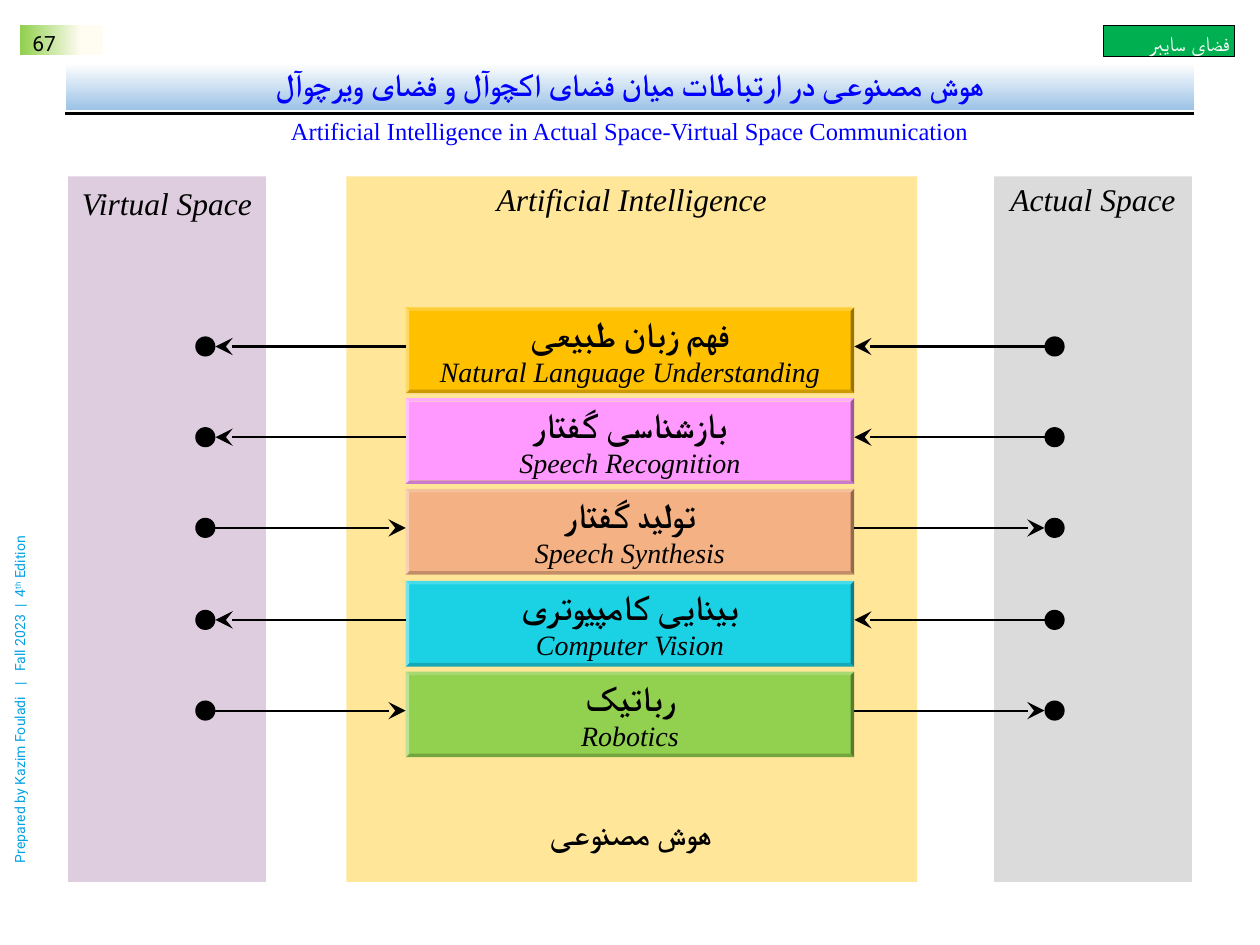
from lxml.etree import SubElement
from pptx import Presentation
from pptx.dml.color import RGBColor
from pptx.enum.shapes import MSO_CONNECTOR as LINK, MSO_SHAPE as SHAPE
from pptx.enum.text import MSO_ANCHOR as ANCHOR, MSO_AUTO_SIZE as FIT, PP_ALIGN as ALIGN
from pptx.oxml.ns import qn
from pptx.util import Emu, Pt

PX = 9144  # 100 px to the inch
ROMAN, SANS, FARSI = "Times New Roman", "Roboto", "Calibri"
BLACK, BLUE = "000000", "0000FF"
ROWS = [  # Farsi, English, fill, whether it leads to actual space
    ("فهم زبان طبیعی", "Natural Language Understanding", "FFC000", False),
    ("بازشناسی گفتار", "Speech Recognition", "FF99FF", False),
    ("تولید گفتار", "Speech Synthesis", "F4B183", True),
    ("بینایی کامپیوتری", "Computer Vision", "1BD2E5", False),
    ("رباتیک", "Robotics", "92D050", True),
]


def px(*nums):
    return [Emu(n * PX) for n in nums]


def rgb(code):
    return RGBColor.from_string(code)


def place(shape, box):
    shape.left, shape.top, shape.width, shape.height = px(*box)


def block(slide, kind, box, color=None):
    """Add a filled shape without line or shadow."""
    shape = slide.shapes.add_shape(kind, *px(*box))
    shape.shadow.inherit = False
    shape.line.fill.background()
    if color:
        shape.fill.solid()
        shape.fill.fore_color.rgb = rgb(color)
    return shape


def blend(shape, angle, *stops):
    """Fill with a gradient of (position, colour) stops."""
    shape.fill.gradient()
    shape.fill.gradient_angle = angle
    for stop, (spot, color) in zip(shape.fill.gradient_stops, stops):
        stop.position = spot
        stop.color.rgb = rgb(color)


def frame(shape, insets=(10, 5, 10, 5), anchor=ANCHOR.TOP):
    """Set up the text frame of a shape and return it."""
    area = shape.text_frame
    area.word_wrap = True
    area.auto_size = FIT.NONE
    area.vertical_anchor = anchor
    (area.margin_left, area.margin_top,
     area.margin_right, area.margin_bottom) = px(*insets)
    return area


def write(para, words, size, face, color=BLACK, align=ALIGN.CENTER,
          bold=False, italic=False, rtl=False):
    para.add_run().text = words
    para.alignment = align
    if rtl:
        para._p.get_or_add_pPr().set("rtl", "1")
    font = para.font
    font.size, font.name = Pt(size), face
    font.bold, font.italic = bold, italic
    font.color.rgb = rgb(color)
    SubElement(font._element, qn("a:cs"), typeface=face)


def label(slide, box, words, **style):
    area = frame(slide.shapes.add_textbox(*px(*box)))
    write(area.paragraphs[0], words, 18, **style)


def line(slide, ends, width, arrow=False):
    link = slide.shapes.add_connector(LINK.STRAIGHT, *px(*ends))
    link.line.color.rgb = rgb(BLACK)
    link.line.width = Pt(width)
    if arrow:
        SubElement(link.line._get_or_add_ln(), qn("a:tailEnd"),
                   type="stealth", w="lg", len="lg")
    SubElement(link._element.spPr, qn("a:effectLst"))


def header(slide, x, y, wide):
    line(slide, (x, y + 40, x + wide, y + 40), 1.5)

    title = slide.shapes.title
    place(title, (x, y, wide, 37))
    blend(title, 270, (0, "FFFFFF"), (1, "9DC3E6"))
    para = frame(title, anchor=ANCHOR.MIDDLE).paragraphs[0]
    para.line_spacing = 0.9
    write(para, "هوش مصنوعی در ارتباطات میان فضای اکچوآل و فضای ویرچوآل",
          18, FARSI, BLUE, bold=True, rtl=True)

    body = slide.placeholders[1]
    place(body, (x, y + 43, wide, 29))
    para = frame(body, (10, 2, 10, 5)).paragraphs[0]
    props = para._p.get_or_add_pPr()
    props.set("marL", "0")
    props.set("indent", "0")
    SubElement(props, qn("a:buNone"))
    para.line_spacing, para.space_before = 0.9, Pt(0)
    write(para, "Artificial Intelligence in Actual Space-Virtual Space Communication",
          14, ROMAN, BLUE, rtl=True)


def corners(slide, y):
    """Page number at the left and topic tag at the right."""
    page = block(slide, SHAPE.RECTANGLE, (16, y, 66, 24))
    blend(page, 180, (0.27, "FFFCF2"), (0.99, "92D050"))
    write(frame(page, (10, 4, 10, 0)).paragraphs[0], "67", 12, SANS,
          align=ALIGN.LEFT)

    tag = block(slide, SHAPE.RECTANGLE, (876, y, 104, 25), "00B050")
    tag.line.color.rgb = rgb(BLACK)
    tag.line.width = Pt(0.5)
    write(frame(tag, (4, 8, 4, 5), ANCHOR.MIDDLE).paragraphs[0],
          "فضای سایبر", 12, "Arial", "FFFFFF", ALIGN.RIGHT)


def credit(slide, box):
    """Upright line of text along the left edge."""
    note = slide.shapes.add_textbox(*px(*box))
    note.rotation = 270
    para = frame(note).paragraphs[0]
    tabs = SubElement(para._p.get_or_add_pPr(), qn("a:tabLst"))
    for stop in (141, 152, 203, 211):
        SubElement(tabs, qn("a:tab"), pos=str(stop * PX), algn="l")
    write(para, "Prepared by Kazim Fouladi\t|\tFall 2023\t|\t4", 8, SANS,
          "04A1E3", ALIGN.LEFT)
    power = para.add_run()
    power.text = "th"
    power.font._element.set("baseline", "30000")
    para.add_run().text = " Edition"


def space(slide, box, drop, name, color):
    """Coloured column with its English name at the top."""
    x, y, wide, _ = box
    block(slide, SHAPE.RECTANGLE, box, color)
    label(slide, (x, y + drop, wide, 40), name, face=ROMAN, italic=True)


def row(slide, box, farsi, english, color, leads):
    """One skill, tied to a dot in the space on either side."""
    x, y, wide, high = box
    skill = block(slide, SHAPE.BEVEL, box, color)
    skill.adjustments[0] = 0.041
    area = frame(skill, (4, 4, 4, 4), ANCHOR.MIDDLE)
    write(area.paragraphs[0], farsi, 20, FARSI, bold=True, rtl=True)
    write(area.add_paragraph(), english, 16, ROMAN, italic=True, rtl=True)

    mid, reach, dot = y + 31, 151, 16
    for left, spot in ((x - reach, x - reach - dot),
                       (x + wide, x + wide + reach)):
        block(slide, SHAPE.OVAL, (spot, mid - dot // 2, dot, dot), BLACK)
        start, end = (left, left + reach) if leads else (left + reach, left)
        line(slide, (start, mid, end, mid), 1.25, arrow=True)


def skills(slide, x, y, wide, high):
    """Spread the rows evenly over the height."""
    tall = 68
    step = (high - tall) / (len(ROWS) - 1)
    for i, item in enumerate(ROWS):
        row(slide, (x, y + round(i * step), wide, tall), *item)


def main():
    deck = Presentation()
    deck.slide_width, deck.slide_height = px(1000, 750)
    slide = deck.slides.add_slide(deck.slide_layouts[1])
    corners(slide, 20)
    credit(slide, (-132, 535, 296, 24))
    header(slide, 52, 50, 896)
    space(slide, (275, 140, 453, 560), -2, "Artificial Intelligence", "FFE699")
    space(slide, (789, 140, 157, 560), -2, "Actual Space", "DBDBDB")
    space(slide, (54, 140, 157, 560), 1, "Virtual Space", "DDCDDF")
    skills(slide, 322, 244, 356, 357)
    label(slide, (373, 641, 255, 40), "هوش مصنوعی", face=FARSI,
          bold=True, rtl=True)
    deck.save("out.pptx")


if __name__ == "__main__":
    main()
